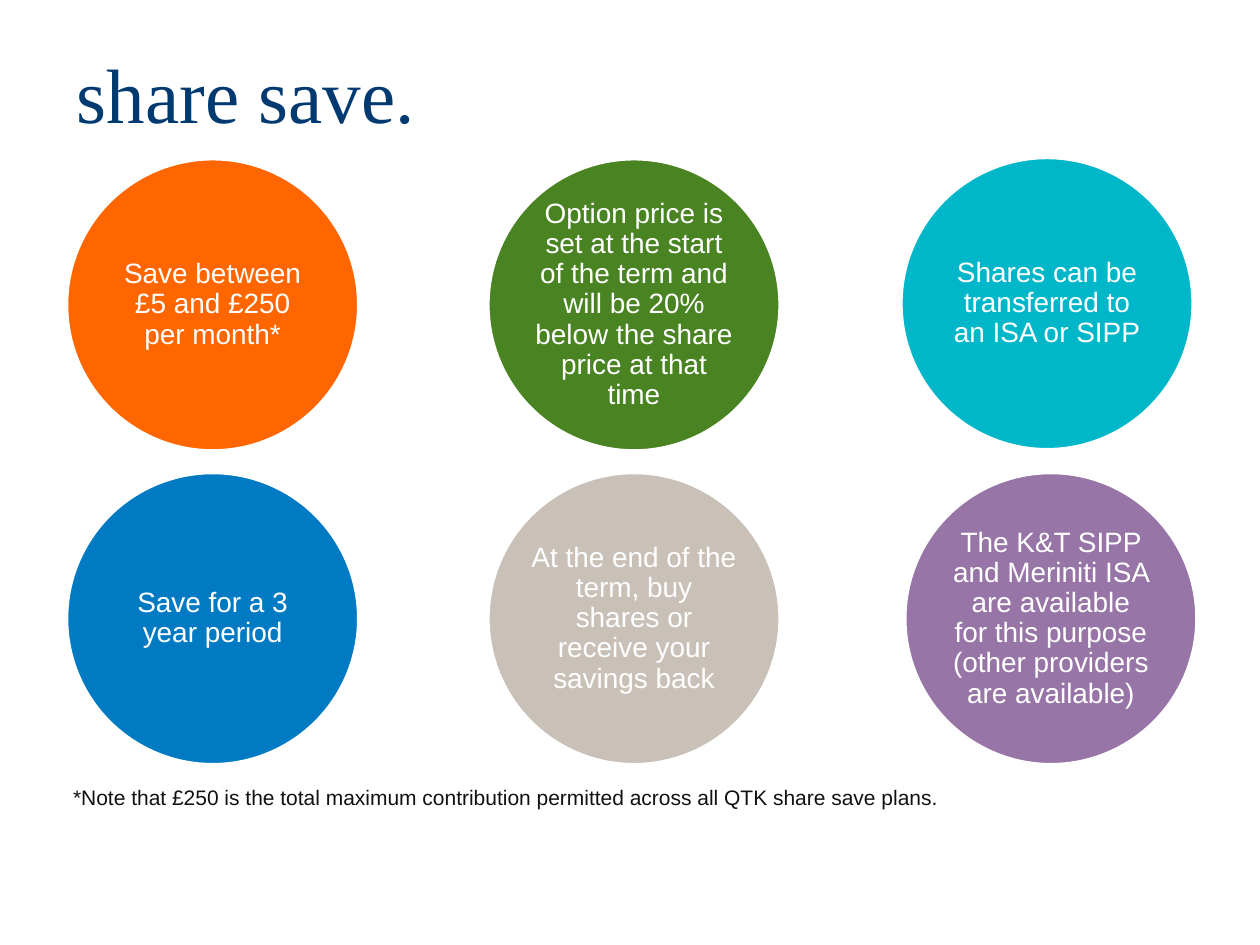
import pptx
import pptx.util
import pptx.dml.color
import pptx.enum.shapes
import pptx.enum.text

Pt = pptx.util.Pt
SIZE = 167
WHITE = "FFFFFF"

# left, top, fill, text inset, text
DISCS = [
    (38, 90.7, "FF6600", 2, "Save between £5 and £250 per month*"),
    (38, 270, "007BC3", 0, "Save for a 3 year period"),
    (278.8, 90.7, "4A8322", 0.5, "Option price is set at the start of the term "
     "and will be 20% below the share price at that time"),
    (278.8, 270, "C9C1B8", 0, "At the end of the term, buy shares or receive "
     "your savings back"),
    (514.8, 90, "00B6C9", 2, "Shares can be transferred to an ISA or SIPP"),
    (517, 270, "9875A7", 2, "The K&T SIPP and Meriniti ISA are available\n"
     "for this purpose (other providers are available)"),
]


def color(code):
    """Turn a hex string into a colour."""
    return pptx.dml.color.RGBColor.from_string(code)


def place(shape, left, top, width, height):
    """Move and size a shape in points."""
    shape.left, shape.top = Pt(left), Pt(top)
    shape.width, shape.height = Pt(width), Pt(height)


def write(shape, text, size, code, face="Arial", align="LEFT"):
    """Put one styled paragraph in a shape and return it."""
    frame = shape.text_frame
    frame.word_wrap = True
    para = frame.paragraphs[0]
    para.text = text
    para.alignment = getattr(pptx.enum.text.PP_ALIGN, align)
    font = para.font
    font.name, font.size = face, Pt(size)
    font.color.rgb = color(code)
    return para


def add_title(slide, text):
    """Fill the title placeholder."""
    title = slide.shapes.title
    place(title, 36.7, 23, 670, 60)
    write(title, text, 44, "003A70", "Times New Roman")
    title.text_frame.vertical_anchor = pptx.enum.text.MSO_ANCHOR.MIDDLE


def add_disc(slide, left, top, fill, inset, text):
    """Draw a filled circle with centred text."""
    disc = slide.shapes.add_shape(
        pptx.enum.shapes.MSO_SHAPE.OVAL, Pt(left), Pt(top), Pt(SIZE), Pt(SIZE))
    disc.shadow.inherit = False
    disc.fill.solid()
    disc.fill.fore_color.rgb = color(fill)
    disc.line.color.rgb = color(WHITE)
    disc.line.width = Pt(2)
    frame = disc.text_frame
    frame.margin_left = frame.margin_right = Pt(inset)
    frame.margin_top = frame.margin_bottom = Pt(inset)
    frame.vertical_anchor = pptx.enum.text.MSO_ANCHOR.MIDDLE
    write(disc, text, 16, WHITE, align="CENTER").line_spacing = 0.9


def add_note(slide, text):
    """Add the footnote under the circles."""
    note = slide.shapes.add_textbox(Pt(34.7), Pt(445), Pt(615), Pt(21.8))
    write(note, text, 12, "111111")
    note.text_frame.auto_size = pptx.enum.text.MSO_AUTO_SIZE.SHAPE_TO_FIT_TEXT


def main():
    """Build and save the slide."""
    deck = pptx.Presentation()
    deck.slide_width, deck.slide_height = Pt(720), Pt(540)
    slide = deck.slides.add_slide(deck.slide_layouts[5])
    add_title(slide, "share save.")
    for disc in DISCS:
        add_disc(slide, *disc)
    add_note(slide, "*Note that £250 is the total maximum contribution "
             "permitted across all QTK share save plans.")
    deck.save("out.pptx")


if __name__ == "__main__":
    main()
